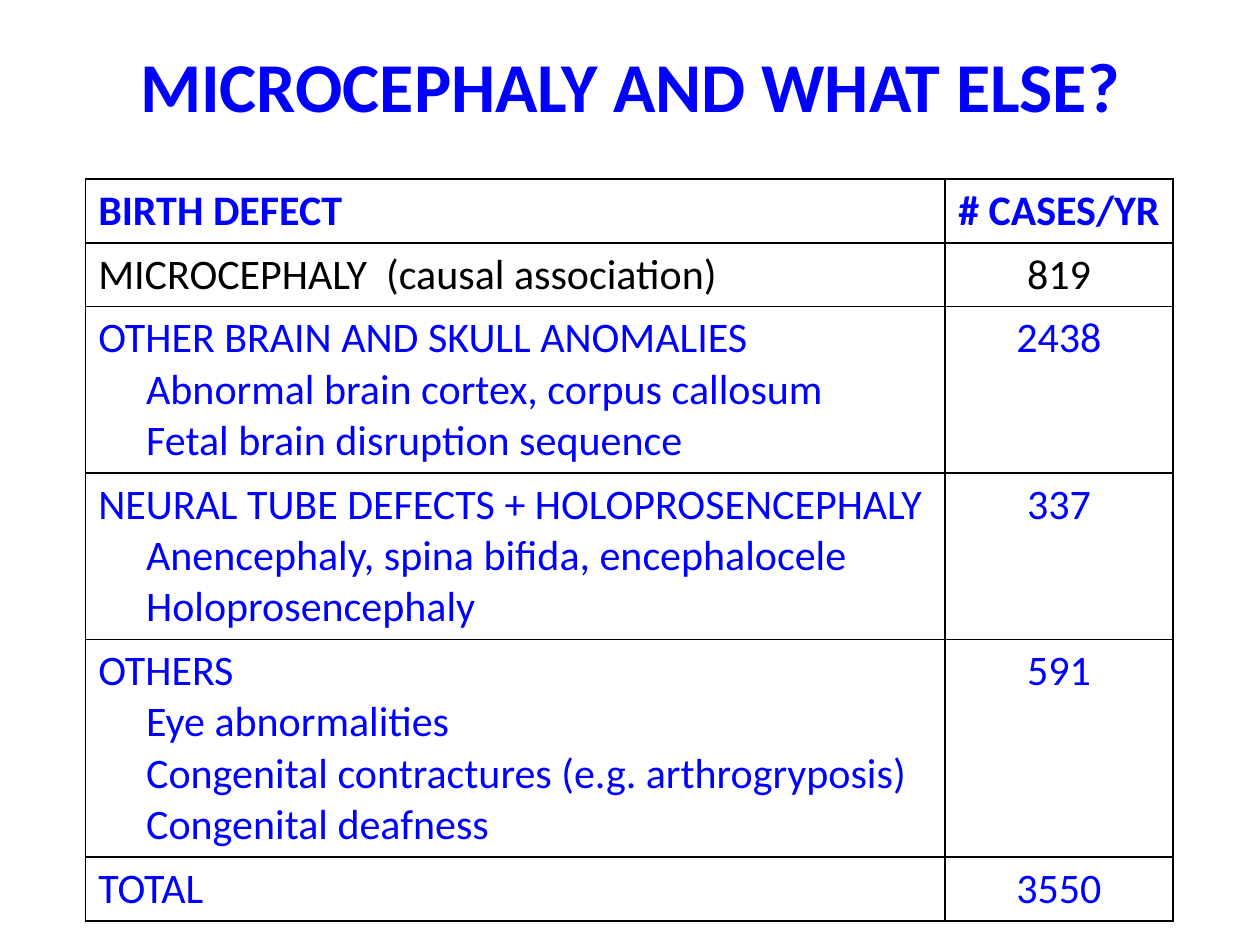
from dataclasses import dataclass

import pptx
import pptx.dml.color
import pptx.enum.text
import pptx.oxml
import pptx.oxml.ns
import pptx.util
from pptx.util import Inches

RGBColor = pptx.dml.color.RGBColor
Align = pptx.enum.text.PP_ALIGN

BLUE = RGBColor(0x00, 0x00, 0xFF)
BLACK = RGBColor(0x00, 0x00, 0x00)
WHITE = RGBColor(0xFF, 0xFF, 0xFF)
FONT = "Calibri"
WIDTHS = (6.82, 1.81)
LINE, PAD = 0.4, 0.1  # height of a text line, margins of a row
INDENT = 0.38


@dataclass
class Row:
    defect: str
    cases: str
    kinds: tuple[str, ...] = ()
    color: RGBColor = BLUE
    bold: bool = False


ROWS = [
    Row("BIRTH DEFECT", "# CASES/YR", bold=True),
    Row("MICROCEPHALY  (causal association)", "819", color=BLACK),
    Row("OTHER BRAIN AND SKULL ANOMALIES", "2438",
        ("Abnormal brain cortex, corpus callosum",
         "Fetal brain disruption sequence")),
    Row("NEURAL TUBE DEFECTS + HOLOPROSENCEPHALY", "337",
        ("Anencephaly, spina bifida, encephalocele", "Holoprosencephaly")),
    Row("OTHERS", "591",
        ("Eye abnormalities", "Congenital contractures (e.g. arthrogryposis)",
         "Congenital deafness")),
    Row("TOTAL", "3550"),
]


def style(para, size: float, color: RGBColor, bold: bool, align) -> None:
    font = para.font
    font.name, font.size, font.bold = FONT, pptx.util.Pt(size), bold
    font.color.rgb = color
    para.alignment = align


def border(cell) -> None:
    props = cell._tc.get_or_add_tcPr()
    for place, side in enumerate(("lnL", "lnR", "lnT", "lnB")):
        props.insert(place, pptx.oxml.parse_xml(
            f'<a:{side} {pptx.oxml.ns.nsdecls("a")} w="12700"><a:solidFill>'
            f'<a:srgbClr val="{BLACK}"/></a:solidFill></a:{side}>'))


def write(cell, lines: tuple[str, ...], row: Row, align) -> None:
    cell.fill.solid()
    cell.fill.fore_color.rgb = WHITE
    border(cell)
    cell.text = "\n".join(lines)
    for rank, para in enumerate(cell.text_frame.paragraphs):
        style(para, 24, row.color, row.bold, align)
        if rank:  # kinds sit indented under their heading
            para._p.get_or_add_pPr().set("marL", str(Inches(INDENT)))


def draw_table(slide, rows: list[Row]) -> None:
    highs = [PAD + LINE * (1 + len(row.kinds)) for row in rows]
    table = slide.shapes.add_table(
        len(rows), len(WIDTHS), Inches(0.68), Inches(1.42),
        Inches(sum(WIDTHS)), Inches(sum(highs))).table
    for col, width in zip(table.columns, WIDTHS):
        col.width = Inches(width)
    for place, (row, high) in enumerate(zip(rows, highs)):
        table.rows[place].height = Inches(high)
        write(table.cell(place, 0), (row.defect, *row.kinds), row, Align.LEFT)
        write(table.cell(place, 1), (row.cases,), row, Align.CENTER)


def draw_title(slide, text: str) -> None:
    title = slide.shapes.title
    title.left, title.top = Inches(0.69), Inches(0.17)
    title.width, title.height = Inches(8.62), Inches(1.08)
    frame = title.text_frame
    frame.text = text
    frame.vertical_anchor = pptx.enum.text.MSO_ANCHOR.MIDDLE
    para = frame.paragraphs[0]
    para.line_spacing = 0.9
    style(para, 40, BLUE, True, Align.CENTER)


def main() -> None:
    deck = pptx.Presentation()
    deck.slide_width, deck.slide_height = Inches(10), Inches(7.5)
    slide = deck.slides.add_slide(deck.slide_layouts.get_by_name("Title Only"))
    draw_title(slide, "MICROCEPHALY AND WHAT ELSE?")
    draw_table(slide, ROWS)
    deck.save("out.pptx")


if __name__ == "__main__":
    main()
